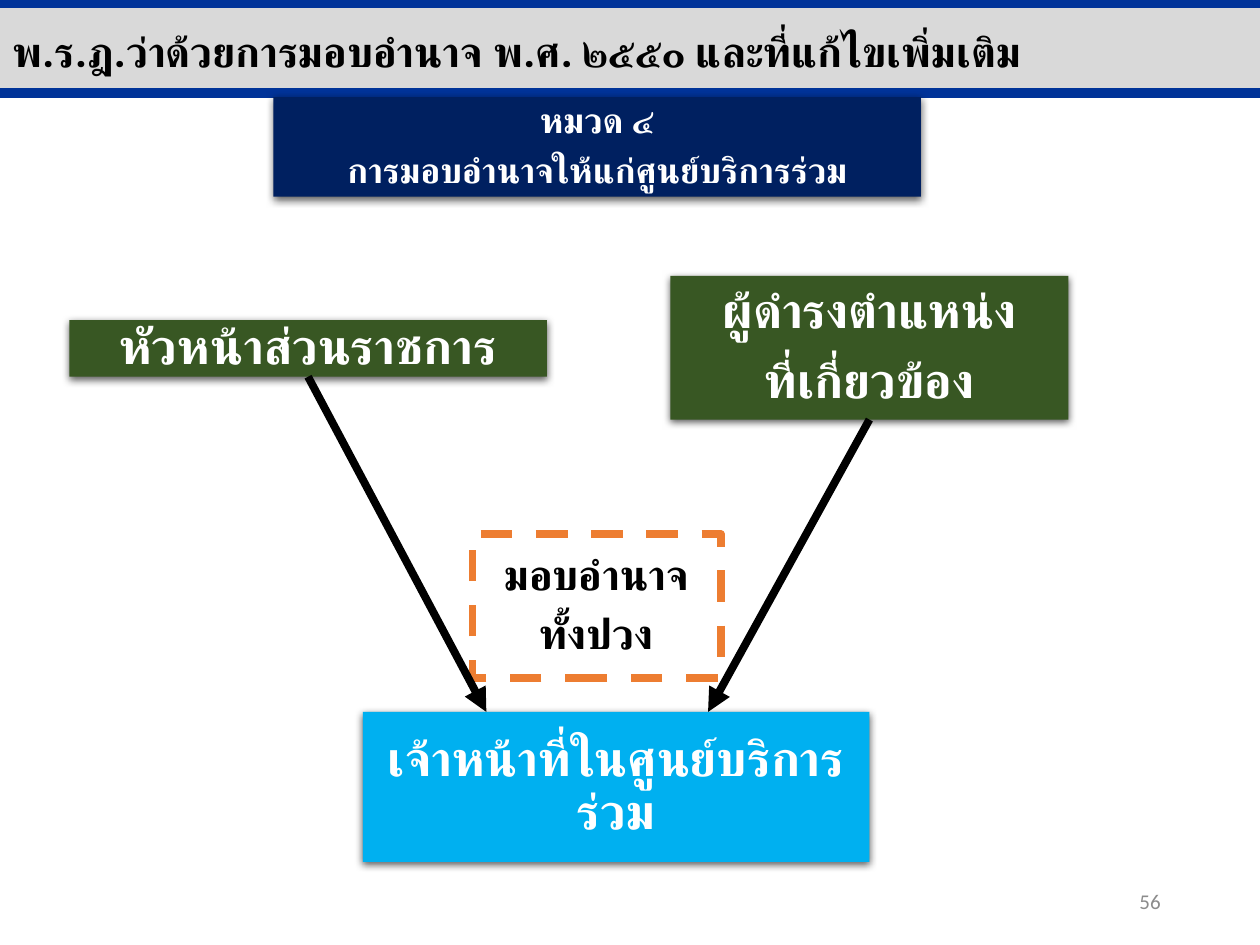
from dataclasses import dataclass
from typing import Any, Optional

from lxml import etree
from pptx import Presentation, util as u
from pptx.dml.color import RGBColor
from pptx.enum import dml, shapes, text
from pptx.oxml import parse_xml
from pptx.oxml.ns import nsdecls, qn

COLUMNS, ROWS = 100, 75
WIDTH, HEIGHT = u.Inches(10), u.Inches(7.5)
FONT = "Roboto"
WHITE = RGBColor(0xFF, 0xFF, 0xFF)
BLACK = RGBColor(0, 0, 0)
GREY = RGBColor(0x8C, 0x8C, 0x8C)
BAND = RGBColor(0xD9, 0xD9, 0xD9)
RULE = RGBColor(0x00, 0x33, 0x99)
NAVY = RGBColor(0x00, 0x20, 0x60)
GREEN = RGBColor(0x38, 0x57, 0x23)
SKY = RGBColor(0x00, 0xB0, 0xF0)
ORANGE = RGBColor(0xED, 0x7D, 0x31)
SHADOW = (
    f'<a:effectLst {nsdecls("a")}><a:outerShdw blurRad="{u.Pt(4.5)}" '
    f'dist="{u.Pt(1.5)}" dir="5400000" algn="ctr" rotWithShape="0">'
    '<a:srgbClr val="000000"><a:alpha val="63000"/></a:srgbClr>'
    "</a:outerShdw></a:effectLst>"
)


@dataclass(frozen=True)
class Area:
    column: float
    row: float
    columns: float
    rows: float

    def place(self) -> tuple[int, int, int, int]:
        return (x(self.column), y(self.row), x(self.columns), y(self.rows))


@dataclass(frozen=True)
class Box:
    area: Area
    lines: tuple[str, ...]
    size: float
    fill: RGBColor
    color: RGBColor = WHITE
    outline: Optional[RGBColor] = None


def x(columns: float) -> int:
    return round(WIDTH * columns / COLUMNS)


def y(rows: float) -> int:
    return round(HEIGHT * rows / ROWS)


def apply(target: Any, values: dict[str, Any]) -> None:
    for name, value in values.items():
        setattr(target, name, value)


def write(paragraph: Any, words: str, size: float, color: RGBColor,
          bold: bool = True, face: str = FONT) -> None:
    run = paragraph.add_run()
    run.text = words
    apply(run.font, {"size": u.Pt(size), "bold": bold, "name": face})
    run.font.color.rgb = color
    for tag in ("a:ea", "a:cs"):
        etree.SubElement(run.font._element, qn(tag)).set("typeface", face)


def draw_box(slide: Any, box: Box) -> Any:
    shape = slide.shapes.add_shape(shapes.MSO_SHAPE.RECTANGLE, *box.area.place())
    shape.shadow.inherit = False
    shape.fill.solid()
    shape.fill.fore_color.rgb = box.fill
    if box.outline is None:
        shape.line.fill.background()
    else:
        shape.line.color.rgb = box.outline
        apply(shape.line, {"width": u.Pt(4.5),
                           "dash_style": dml.MSO_LINE.DASH})
    if box.lines and box.outline is None:
        properties = shape._element.spPr
        properties.replace(properties.find(qn("a:effectLst")), parse_xml(SHADOW))
    frame = shape.text_frame
    margins = ("margin_left", "margin_top", "margin_right", "margin_bottom")
    apply(frame, dict.fromkeys(margins, u.Inches(0.15)))
    apply(frame, {"word_wrap": True, "vertical_anchor": text.MSO_ANCHOR.MIDDLE})
    for index, words in enumerate(box.lines):
        paragraph = frame.add_paragraph() if index else frame.paragraphs[0]
        apply(paragraph, {"alignment": text.PP_ALIGN.CENTER, "line_spacing": 0.9,
                          "space_after": u.Pt(round(box.size * 0.35))})
        write(paragraph, words, box.size, box.color)
    return shape


def draw_line(slide: Any, start: tuple[float, float], end: tuple[float, float],
              color: RGBColor, width: float, arrow: bool = False) -> Any:
    line = slide.shapes.add_connector(
        shapes.MSO_CONNECTOR.STRAIGHT, x(start[0]), y(start[1]), x(end[0]), y(end[1]))
    line.line.color.rgb = color
    line.line.width = u.Pt(width)
    if arrow:
        etree.SubElement(line.line._get_or_add_ln(), qn("a:tailEnd")).set("type", "triangle")
    etree.SubElement(line._element.spPr, qn("a:effectLst"))
    return line


def draw_header(slide: Any) -> None:
    draw_box(slide, Box(Area(0, 0.5, COLUMNS, 6.8), (), 24, BAND))
    for row in (7.4, 0.2):
        draw_line(slide, (0, row), (COLUMNS, row), RULE, 6)
    title = slide.shapes.title
    slide.shapes._spTree.append(title._element)
    apply(title, dict(zip(("left", "top", "width", "height"),
                          Area(0, 1.5, 94.8, 5).place())))
    apply(title.text_frame, {"word_wrap": True,
                             "vertical_anchor": text.MSO_ANCHOR.MIDDLE})
    heading = title.text_frame.paragraphs[0]
    heading.alignment = text.PP_ALIGN.LEFT
    write(heading, "พ.ร.ฎ.ว่าด้วยการมอบอำนาจ พ.ศ. ๒๕๕๐ และที่แก้ไขเพิ่มเติม", 24, BLACK)


def draw_page_number(slide: Any) -> None:
    frame = slide.shapes.add_textbox(*Area(70.6, 69.5, 22.5, 4).place()).text_frame
    apply(frame, {"word_wrap": True, "vertical_anchor": text.MSO_ANCHOR.MIDDLE})
    frame.paragraphs[0].alignment = text.PP_ALIGN.RIGHT
    write(frame.paragraphs[0], "56", 12, GREY, bold=False, face="Calibri")


def main() -> None:
    deck = Presentation()
    apply(deck, {"slide_width": WIDTH, "slide_height": HEIGHT})
    slide = deck.slides.add_slide(deck.slide_layouts[5])
    draw_header(slide)
    draw_page_number(slide)

    chapter = Box(Area(21.7, 7.7, 51.4, 7.9),
                  ("หมวด ๔", "การมอบอำนาจให้แก่ศูนย์บริการร่วม"), 20, NAVY)
    officeholder = Box(Area(53.2, 21.9, 31.6, 11.4),
                       ("ผู้ดำรงตำแหน่ง", "ที่เกี่ยวข้อง"), 28, GREEN)
    agency_head = Box(Area(5.5, 25.4, 37.9, 4.5), ("หัวหน้าส่วนราชการ",), 28, GREEN)
    center_staff = Box(Area(28.8, 56.5, 40.2, 11.9),
                       ("เจ้าหน้าที่ในศูนย์บริการร่วม",), 28, SKY)
    delegation = Box(Area(37.5, 42.4, 19.7, 11.4), ("มอบอำนาจ", "ทั้งปวง"),
                     24, WHITE, BLACK, ORANGE)

    draw_box(slide, chapter)
    delegators = [draw_box(slide, box) for box in (officeholder, agency_head)]
    for box in (center_staff, delegation):
        draw_box(slide, box)
    for delegator, column in zip(delegators, (56.2, 38.6)):
        end = (column, center_staff.area.row)
        arrow = draw_line(slide, (0, 0), end, BLACK, 4.5, arrow=True)
        arrow.begin_connect(delegator, 2)

    deck.save("out.pptx")


if __name__ == "__main__":
    main()
